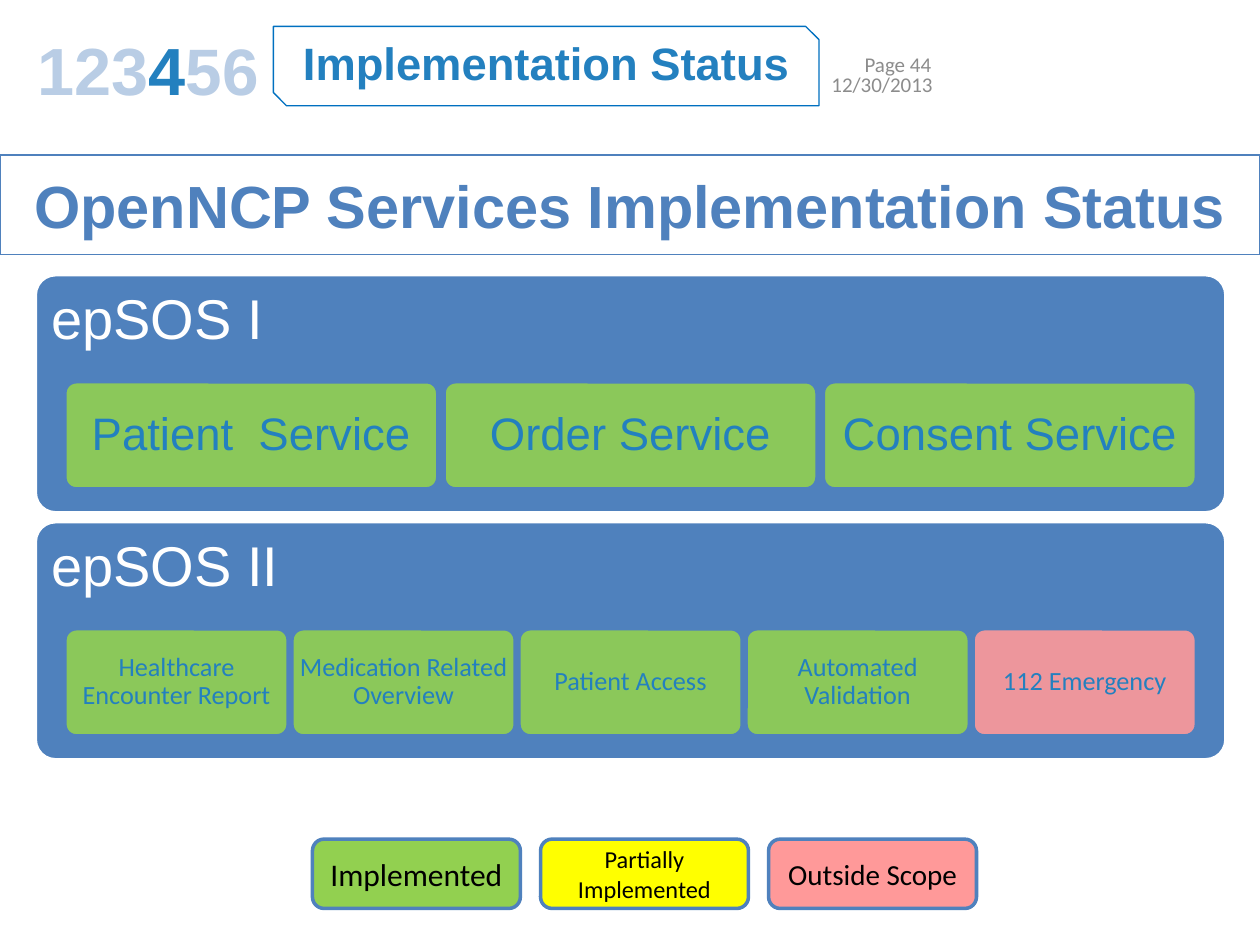
from lxml import etree
from pptx import Presentation
from pptx.dml.color import RGBColor
from pptx.enum.shapes import MSO_SHAPE as SHAPE
from pptx.enum.text import MSO_ANCHOR as ANCHOR, MSO_AUTO_SIZE as AUTO, PP_ALIGN as ALIGN
from pptx.oxml.ns import qn
from pptx.util import Inches, Pt

BLUE, TEXT_BLUE = "4F81BD", "2380BF"
PALE_BLUE, GREY = "B9CDE5", "8C8C8C"
GREEN, YELLOW, RED = "92D050", "FFFF00", "FF9999"
WHITE, BLACK = "FFFFFF", "000000"


def rgb(value):
    """Turn a hex string into a colour."""
    return RGBColor.from_string(value)


def style_run(r, size, color, font="Arial", bold=False):
    """Format one run."""
    r.font.size, r.font.name, r.font.bold = Pt(size), font, bold
    r.font.color.rgb = rgb(color)


def set_text(s, text, size, color, font="Arial", bold=False, align=ALIGN.CENTER,
             anchor=ANCHOR.MIDDLE, spacing=1.0, inset=None):
    """Write one formatted paragraph into a shape."""
    tf = s.text_frame
    tf.word_wrap, tf.auto_size, tf.vertical_anchor = True, AUTO.NONE, anchor
    if inset is not None:
        tf.margin_left = tf.margin_right = Inches(inset)
        tf.margin_top = tf.margin_bottom = Inches(inset)
    p = tf.paragraphs[0]
    p.text, p.alignment, p.line_spacing = text, align, spacing
    for r in p.runs:
        style_run(r, size, color, font, bold)


def add_box(slide, kind, box, fill, line, width, alpha=None, adj=None):
    """Add a preset shape with the given fill and outline."""
    s = slide.shapes.add_shape(kind, *map(Inches, box))
    s.shadow.inherit = False
    if fill:
        s.fill.solid()
        s.fill.fore_color.rgb = rgb(fill)
    else:
        s.fill.background()
    if alpha:
        color = s.fill._xPr.find(qn("a:solidFill"))[0]
        etree.SubElement(color, qn("a:alpha")).set("val", str(alpha * 1000))
    if adj:
        s.adjustments[0] = adj
    s.line.color.rgb = rgb(line)
    s.line.width = Pt(width)
    return s


def add_title(slide, box, text):
    """Place the outlined slide title."""
    s = slide.shapes.title
    s.left, s.top, s.width, s.height = map(Inches, box)
    s.line.color.rgb = rgb(BLUE)
    s.line.width = Pt(0.75)
    set_text(s, text, 34, BLUE, bold=True)


def add_header(slide, box):
    """Place the section numbers, section name, page and date."""
    x, y, w, h = box
    s = add_box(slide, SHAPE.SNIP_2_DIAG_RECTANGLE, (x + 1.97, y, 4.33, h - 0.08),
                None, "0070C0", 0.75)
    set_text(s, "Implementation Status", 25.9, TEXT_BLUE, bold=True, spacing=0.9)

    tb = slide.shapes.add_textbox(Inches(x), Inches(y + 0.08), Inches(w), Inches(h - 0.08))
    tf = tb.text_frame
    tf.word_wrap, tf.vertical_anchor = True, ANCHOR.MIDDLE
    p = tf.paragraphs[0]
    p.line_spacing = 0.8
    for text, size, color in (("123", 38.1, PALE_BLUE), ("4", 38.1, TEXT_BLUE),
                              ("56", 37.5, PALE_BLUE)):
        r = p.add_run()
        r.text = text
        style_run(r, size, color, bold=True)

    for text, dx, dy, width, align, anchor in (
            ("Page 44", 6.13, 0.1, 1.16, ALIGN.RIGHT, ANCHOR.MIDDLE),
            ("12/30/2013", 6.3, 0.31, 1.25, ALIGN.LEFT, ANCHOR.TOP)):
        tb = slide.shapes.add_textbox(Inches(x + dx), Inches(y + dy), Inches(width), Inches(0.4))
        set_text(tb, text, 12, GREY, "Calibri", align=align, anchor=anchor)


def add_phase(slide, box, name, services, gap, size, font):
    """Place a phase panel with an even row of service tiles."""
    x, y, w, h = box
    s = add_box(slide, SHAPE.ROUNDED_RECTANGLE, box, BLUE, WHITE, 2, adj=0.085)
    set_text(s, name, 32, WHITE, align=ALIGN.LEFT, anchor=ANCHOR.TOP, spacing=0.9, inset=0.08)
    margin = 0.235
    tile_w = (w - 2 * margin - gap * (len(services) - 1)) / len(services)
    for i, (text, fill) in enumerate(services):
        tile = (x + margin + i * (tile_w + gap), y + 0.85, tile_w, 0.85)
        s = add_box(slide, SHAPE.ROUNDED_RECTANGLE, tile, fill, BLUE, 2, alpha=90, adj=0.105)
        set_text(s, text, size, TEXT_BLUE, font, spacing=0.9, inset=0.03)


def add_legend(slide, box, entries):
    """Place the row of status keys."""
    x, y, w, h = box
    key_w = 1.65
    step = (w - key_w) / (len(entries) - 1)
    for i, (text, fill, size) in enumerate(entries):
        s = add_box(slide, SHAPE.ROUNDED_RECTANGLE, (x + i * step, y, key_w, h), fill, BLUE, 2)
        set_text(s, text, size, BLACK, "Calibri")


def main():
    """Build and save the slide."""
    prs = Presentation()
    prs.slide_width, prs.slide_height = Inches(10), Inches(7.5)
    slide = prs.slides.add_slide(prs.slide_layouts[5])
    add_title(slide, (0, 1.23, 10, 0.79), "OpenNCP Services Implementation Status")
    add_header(slide, (0.2, 0.21, 7.32, 0.71))
    add_phase(slide, (0.28, 2.18, 9.45, 1.89), "epSOS I",
              [("Patient  Service", GREEN), ("Order Service", GREEN),
               ("Consent Service", GREEN)], 0.05, 26, "Arial")
    add_phase(slide, (0.28, 4.14, 9.45, 1.89), "epSOS II",
              [("Healthcare Encounter Report", GREEN), ("Medication Related Overview", GREEN),
               ("Patient Access", GREEN), ("Automated Validation", GREEN),
               ("112 Emergency", RED)], 0.03, 15, "Calibri")
    add_legend(slide, (2.48, 6.66, 5.27, 0.55),
               [("Implemented", GREEN, 18), ("Partially Implemented", YELLOW, 13.9),
                ("Outside Scope", RED, 16.6)])
    prs.save("out.pptx")


if __name__ == "__main__":
    main()
